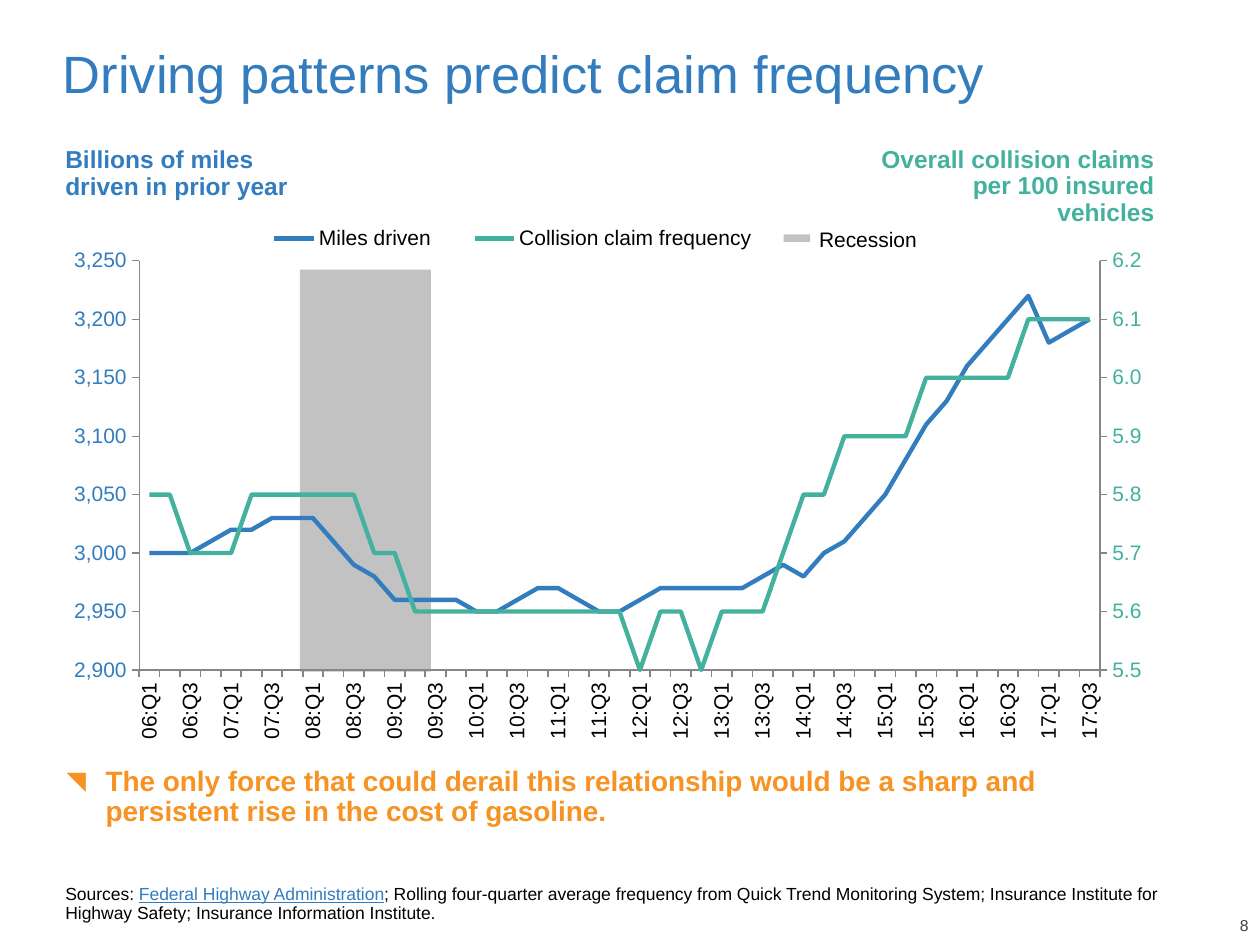
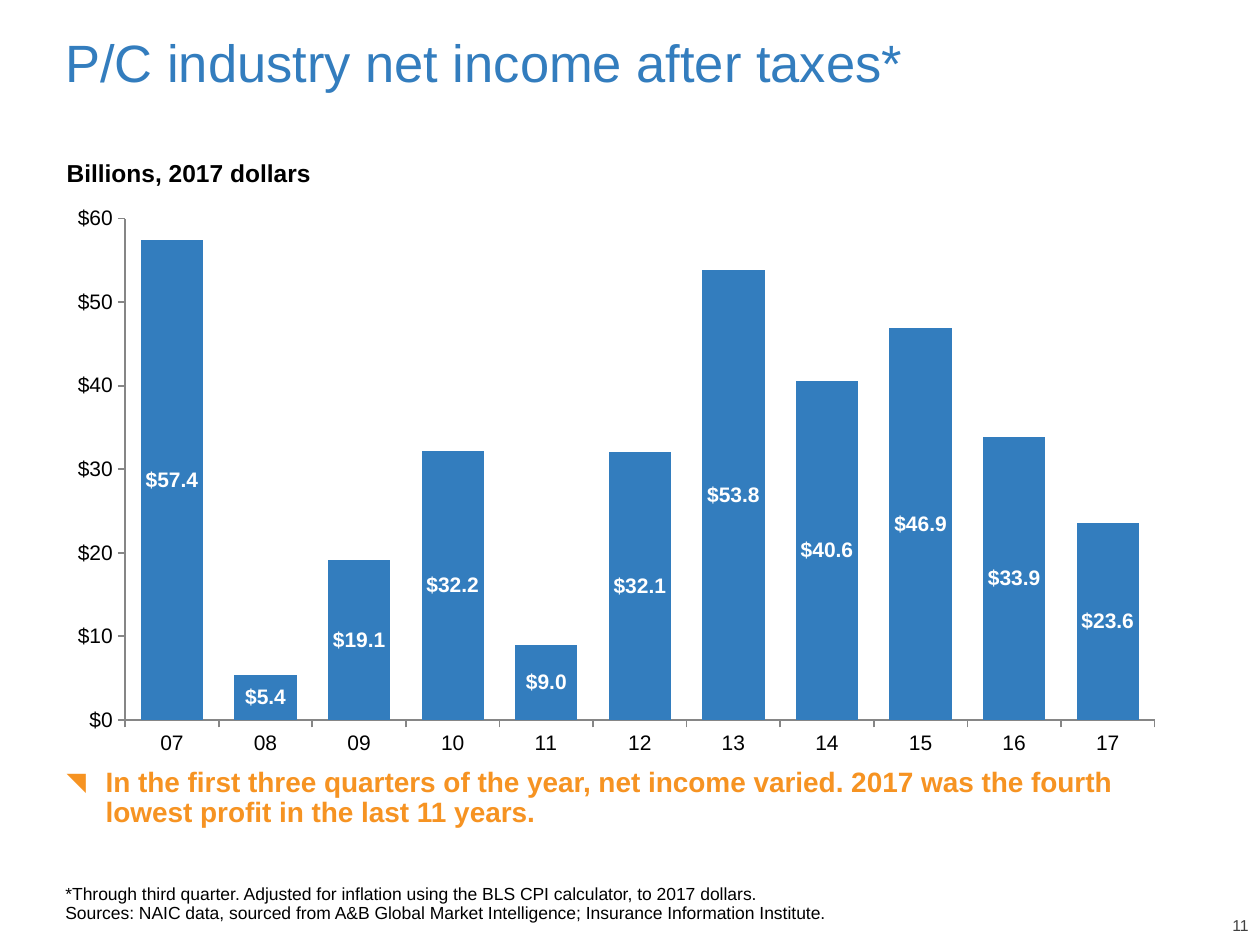
import copy

import pptx
import pptx.chart.axis
import pptx.chart.data
import pptx.dml.color
import pptx.enum.chart
import pptx.enum.shapes
import pptx.enum.text
import pptx.oxml
import pptx.oxml.ns
import pptx.util

Inches = pptx.util.Inches
Pt = pptx.util.Pt
RGBColor = pptx.dml.color.RGBColor
qn = pptx.oxml.ns.qn
ALIGN = pptx.enum.text.PP_ALIGN
ANCHOR = pptx.enum.text.MSO_ANCHOR
CHART = pptx.enum.chart

# Shared look
FONT = "Arial"
BLUE = RGBColor(0x33, 0x7D, 0xBE)
GREEN = RGBColor(0x43, 0xB1, 0x9E)
ORANGE = RGBColor(0xF6, 0x93, 0x22)
GREY = RGBColor(0xC2, 0xC2, 0xC2)
AXIS_GREY = RGBColor(0x86, 0x86, 0x86)
DARK = RGBColor(0x40, 0x40, 0x40)
BLACK = RGBColor(0, 0, 0)
WHITE = RGBColor(0xFF, 0xFF, 0xFF)

# Content: driving patterns
DRIVING = {
    "title": "Driving patterns predict claim frequency",
    "title_at": (0.4, 0.33, 9.25, 0.79),
    "takeaway": "The only force that could derail this relationship would be "
                "a sharp and persistent rise in the cost of gasoline.",
    "takeaway_top": 6.04,
    "sources": [
        ("Sources: ", False),
        ("Federal Highway Administration", True),
        ("; Rolling four-quarter average frequency from Quick Trend Monitoring System; "
         "Insurance Institute for Highway Safety; Insurance Information Institute.", False),
    ],
    "number": "8",
}
QUARTERS = [f"{year:02}:Q{quarter}" for year in range(6, 18) for quarter in range(1, 5)][:-1]
MILES_DRIVEN = [
    3000, 3000, 3000, 3010, 3020, 3020, 3030, 3030, 3030, 3010, 2990, 2980,
    2960, 2960, 2960, 2960, 2950, 2950, 2960, 2970, 2970, 2960, 2950, 2950,
    2960, 2970, 2970, 2970, 2970, 2970, 2980, 2990, 2980, 3000, 3010, 3030,
    3050, 3080, 3110, 3130, 3160, 3180, 3200, 3220, 3180, 3190, 3200,
]
CLAIM_FREQUENCY = [
    5.8, 5.8, 5.7, 5.7, 5.7, 5.8, 5.8, 5.8, 5.8, 5.8, 5.8, 5.7,
    5.7, 5.6, 5.6, 5.6, 5.6, 5.6, 5.6, 5.6, 5.6, 5.6, 5.6, 5.6,
    5.5, 5.6, 5.6, 5.5, 5.6, 5.6, 5.6, 5.7, 5.8, 5.8, 5.9, 5.9,
    5.9, 5.9, 6.0, 6.0, 6.0, 6.0, 6.0, 6.1, 6.1, 6.1, 6.1,
]

# Content: net income
INCOME = {
    "title": "P/C industry net income after taxes*",
    "title_at": (0.42, 0.25, 9.25, 0.7),
    "takeaway": "In the first three quarters of the year, net income varied. "
                "2017 was the fourth lowest profit in the last 11 years.",
    "takeaway_top": 6.05,
    "sources": "*Through third quarter. Adjusted for inflation using the BLS CPI calculator, "
               "to 2017 dollars.\vSources: NAIC data, sourced from A&B Global Market "
               "Intelligence; Insurance Information Institute.",
    "number": "11",
}
YEARS = [f"{year:02}" for year in range(7, 18)]
NET_INCOME = [57.4, 5.4, 19.1, 32.2, 9.0, 32.1, 53.8, 40.6, 46.9, 33.9, 23.6]


def add_text(page, at, text, size, color, bold=False, align=ALIGN.LEFT, anchor=ANCHOR.TOP,
             insets=(0.1, 0.05), before=0, bullet=None, wrap=True):
    """Add one paragraph; text is a string or a list of (text, underlined) spans."""
    box = page.shapes.add_textbox(*map(Inches, at))
    frame = box.text_frame
    frame.word_wrap = wrap
    frame.vertical_anchor = anchor
    frame.margin_left = frame.margin_right = Inches(insets[0])
    frame.margin_top = frame.margin_bottom = Inches(insets[1])
    para = frame.paragraphs[0]
    para.alignment = align
    para.line_spacing = 0.9
    para.space_before = Pt(before)
    if bullet:
        properties = para._p.get_or_add_pPr()
        properties.set("marL", str(Inches(0.31)))
        properties.set("indent", str(-Inches(0.31)))
        for tag, name, value in (("buSzPct", "val", "90000"), ("buFont", "typeface", FONT),
                                 ("buChar", "char", bullet)):
            mark = pptx.oxml.parse_xml(f"<a:{tag} {pptx.oxml.ns.nsdecls('a')}/>")
            mark.set(name, value)
            properties.append(mark)
    para.font.name = FONT
    para.font.size = Pt(size)
    para.font.bold = bold
    para.font.color.rgb = color
    if isinstance(text, str):
        para.text = text
    else:
        for words, underlined in text:
            span = para.add_run()
            span.text = words
            if underlined:
                span.font.underline = True
                span.font.color.rgb = BLUE


def add_page(deck, content):
    """Add a blank page with its title, takeaway, sources and number."""
    page = deck.slides.add_slide(deck.slide_layouts[6])
    add_text(page, (9.43, 7.29, 0.48, 0.13), content["number"], 9, DARK,
             align=ALIGN.RIGHT, anchor=ANCHOR.BOTTOM, insets=(0, 0))
    add_text(page, content["title_at"], content["title"], 30, BLUE)
    add_text(page, (0.43, content["takeaway_top"], 8.74, 0.59), content["takeaway"],
             16, ORANGE, bold=True, before=6, bullet="◥")
    add_text(page, (0.42, 6.88, 9.25, 0.45), content["sources"], 10, BLACK,
             anchor=ANCHOR.BOTTOM, insets=(0.1, 0), before=2)
    return page


def add_grey_block(page, at):
    block = page.shapes.add_shape(pptx.enum.shapes.MSO_SHAPE.RECTANGLE, *map(Inches, at))
    block.shadow.inherit = False
    block.fill.solid()
    block.fill.fore_color.rgb = GREY
    block.line.fill.background()


def chart_xml(tag, inner):
    return pptx.oxml.parse_xml(
        f"<c:{tag} {pptx.oxml.ns.nsdecls('c', 'a')}>{inner}</c:{tag}>")


def manual_layout(x, y, width, height, inner=False):
    target = '<c:layoutTarget val="inner"/>' if inner else ""
    modes = '<c:xMode val="edge"/><c:yMode val="edge"/>'
    sizes = "".join(f'<c:{name} val="{value}"/>'
                    for name, value in zip("xywh", (x, y, width, height)))
    return chart_xml("layout", f"<c:manualLayout>{target}{modes}{sizes}</c:manualLayout>")


def style_axis(axis, color=BLACK):
    axis.has_major_gridlines = False
    axis.major_tick_mark = CHART.XL_TICK_MARK.OUTSIDE
    axis.minor_tick_mark = CHART.XL_TICK_MARK.NONE
    axis.format.line.color.rgb = AXIS_GREY
    axis.format.line.width = Pt(1)
    font = axis.tick_labels.font
    font.name, font.size = FONT, Pt(12)
    font.color.rgb = color


def scale_axis(axis, low, high, step, number_format, color=BLACK):
    style_axis(axis, color)
    axis.minimum_scale, axis.maximum_scale, axis.major_unit = low, high, step
    axis.tick_labels.number_format = number_format
    axis.tick_labels.number_format_is_linked = False


def add_chart(page, kind, at, plot, categories, series):
    data = pptx.chart.data.CategoryChartData()
    data.categories = categories
    for name, values in series:
        data.add_series(name, values)
    chart = page.shapes.add_chart(kind, *map(Inches, at), data).chart
    chart.has_title = False
    chart.has_legend = False
    chart.font.name, chart.font.size = FONT, Pt(12)
    chart.font.color.rgb = BLACK
    chart.plots[0].vary_by_categories = False
    style_axis(chart.category_axis)
    # Fixed plot area, no background
    area = chart._chartSpace.chart.plotArea
    for old in area.findall(qn("c:layout")):
        area.remove(old)
    area.insert(0, manual_layout(*plot, inner=True))
    clear = chart_xml("spPr", "<a:noFill/><a:ln><a:noFill/></a:ln>")
    area.append(clear)
    chart._chartSpace.chart.addnext(copy.deepcopy(clear))
    return chart


def move_to_right_axis(chart):
    """Plot the last series against a second value axis and return that axis."""
    area = chart._chartSpace.chart.plotArea
    left_plot = area.find(qn("c:lineChart"))
    right_plot = copy.deepcopy(left_plot)
    left_plot.remove(left_plot.findall(qn("c:ser"))[-1])
    for series in right_plot.findall(qn("c:ser"))[:-1]:
        right_plot.remove(series)
    left_plot.addnext(right_plot)

    categories = copy.deepcopy(area.find(qn("c:catAx")))
    values = copy.deepcopy(area.find(qn("c:valAx")))
    for axis, own, other in ((categories, "5001", "5002"), (values, "5002", "5001")):
        axis.find(qn("c:axId")).set("val", own)
        axis.find(qn("c:crossAx")).set("val", other)
    for reference, own in zip(right_plot.findall(qn("c:axId")), ("5001", "5002")):
        reference.set("val", own)
    values.find(qn("c:axPos")).set("val", "r")
    values.find(qn("c:crosses")).set("val", "max")
    area.find(qn("c:valAx")).addnext(values)
    values.addnext(categories)
    pptx.chart.axis.CategoryAxis(categories).visible = False
    return pptx.chart.axis.ValueAxis(values)


def build_driving(deck):
    page = add_page(deck, DRIVING)
    add_grey_block(page, (2.38, 2.14, 1.04, 3.19))
    add_text(page, (0.42, 1.12, 2.16, 0.59), "Billions of miles driven in prior year",
             14, BLUE, bold=True)
    chart = add_chart(page, CHART.XL_CHART_TYPE.LINE, (0.34, 1.72, 9.1, 4.32),
                      (0.084, 0.081, 0.838, 0.752), QUARTERS,
                      [("Miles driven", MILES_DRIVEN),
                       ("Collision claim frequency", CLAIM_FREQUENCY)])
    for series, color in zip(chart.plots[0].series, (BLUE, GREEN)):
        series.smooth = False
        series.marker.style = CHART.XL_MARKER_STYLE.NONE
        series.format.line.color.rgb = color
        series.format.line.width = Pt(2.5)

    # Every second quarter is named, reading upwards
    quarter_axis = chart.category_axis._element
    quarter_axis.find(qn("c:txPr")).find(qn("a:bodyPr")).set("rot", "-5400000")
    skip = chart_xml("tickLblSkip", "")
    skip.set("val", "2")
    quarter_axis.find(qn("c:noMultiLvlLbl")).addprevious(skip)
    miles_axis, claims_axis = chart.value_axis, move_to_right_axis(chart)
    scale_axis(miles_axis, 2900, 3250, 50, "#,##0", BLUE)
    scale_axis(claims_axis, 5.5, 6.2, 0.1, "0.0", GREEN)
    for axis in (miles_axis, claims_axis):
        axis.format.line.width = Pt(0.75)

    # Legend, with a key for the recession band
    chart.has_legend = True
    legend = chart.legend
    legend.position = CHART.XL_LEGEND_POSITION.BOTTOM
    legend.include_in_layout = False
    legend.font.name, legend.font.size = FONT, Pt(12)
    legend._element.find(qn("c:legendPos")).addnext(manual_layout(0.17, 0.01, 0.48, 0.06))
    add_grey_block(page, (6.22, 1.86, 0.21, 0.06))
    add_text(page, (6.5, 1.82, 0.98, 0.19), "Recession", 12, BLACK, insets=(0, 0), wrap=False)
    add_text(page, (6.81, 1.12, 2.45, 0.7), "Overall collision claims per 100 insured vehicles",
             14, GREEN, bold=True, align=ALIGN.RIGHT)


def build_income(deck):
    page = add_page(deck, INCOME)
    add_text(page, (0.43, 1.23, 2.89, 0.31), "Billions, 2017 dollars", 14, BLACK,
             bold=True, anchor=ANCHOR.MIDDLE)
    chart = add_chart(page, CHART.XL_CHART_TYPE.COLUMN_CLUSTERED, (0.54, 1.63, 8.89, 4.59),
                      (0.051, 0.023, 0.919, 0.867), YEARS, [("Series 1", NET_INCOME)])
    scale_axis(chart.value_axis, 0, 60, 10, '"$"#,##0')
    chart.category_axis.tick_label_position = CHART.XL_TICK_LABEL_POSITION.LOW
    bars = chart.plots[0]
    bars.gap_width = 50
    bars.series[0].format.fill.solid()
    bars.series[0].format.fill.fore_color.rgb = BLUE
    bars.has_data_labels = True
    labels = bars.data_labels
    labels.show_value = True
    labels.position = CHART.XL_LABEL_POSITION.CENTER
    labels.number_format = '"$"#,##0.0'
    labels.number_format_is_linked = False
    labels.font.name, labels.font.size, labels.font.bold = FONT, Pt(12), True
    labels.font.color.rgb = WHITE


def main():
    deck = pptx.Presentation()
    deck.slide_width, deck.slide_height = Inches(10), Inches(7.5)
    build_driving(deck)
    build_income(deck)
    deck.save("out.pptx")


if __name__ == "__main__":
    main()
